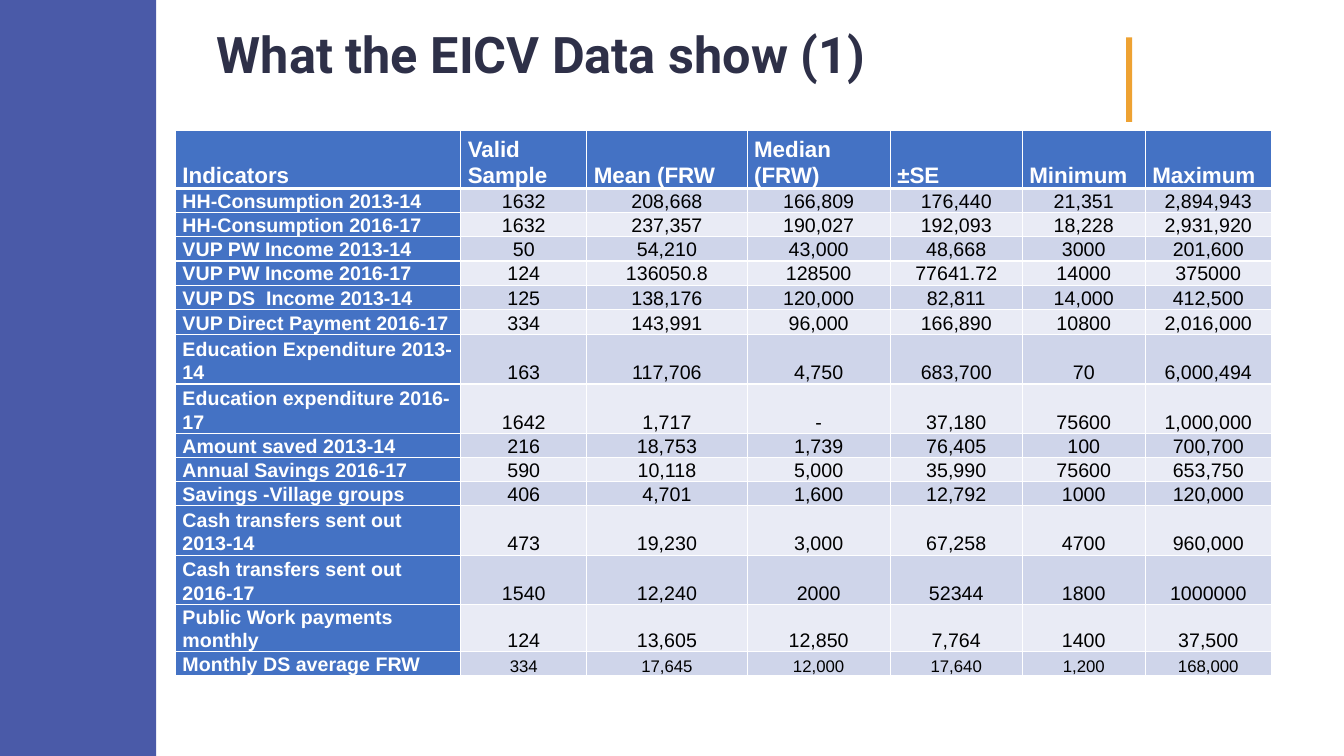
from dataclasses import dataclass

from lxml.etree import SubElement
from pptx import Presentation
from pptx.dml.color import RGBColor
from pptx.enum.shapes import MSO_SHAPE
from pptx.enum.text import MSO_ANCHOR, PP_ALIGN
from pptx.oxml.ns import qn
from pptx.util import Inches, Pt

TITLE = "What the EICV Data show (1)"
HEADS = ["Indicators", "Valid Sample", "Mean (FRW", "Median (FRW)", "±SE", "Minimum", "Maximum"]
ROWS = [
    ("HH-Consumption 2013-14", "1632", "208,668", "166,809", "176,440", "21,351", "2,894,943"),
    ("HH-Consumption 2016-17", "1632", "237,357", "190,027", "192,093", "18,228", "2,931,920"),
    ("VUP PW Income 2013-14", "50", "54,210", "43,000", "48,668", "3000", "201,600"),
    ("VUP PW Income 2016-17", "124", "136050.8", "128500", "77641.72", "14000", "375000"),
    ("VUP DS  Income 2013-14", "125", "138,176", "120,000", "82,811", "14,000", "412,500"),
    ("VUP Direct Payment 2016-17", "334", "143,991", "96,000", "166,890", "10800", "2,016,000"),
    ("Education Expenditure 2013-14", "163", "117,706", "4,750", "683,700", "70", "6,000,494"),
    ("Education expenditure 2016-17", "1642", "1,717", "-", "37,180", "75600", "1,000,000"),
    ("Amount saved 2013-14", "216", "18,753", "1,739", "76,405", "100", "700,700"),
    ("Annual Savings 2016-17", "590", "10,118", "5,000", "35,990", "75600", "653,750"),
    ("Savings -Village groups", "406", "4,701", "1,600", "12,792", "1000", "120,000"),
    ("Cash transfers sent out 2013-14", "473", "19,230", "3,000", "67,258", "4700", "960,000"),
    ("Cash transfers sent out 2016-17", "1540", "12,240", "2000", "52344", "1800", "1000000"),
    ("Public Work payments monthly", "124", "13,605", "12,850", "7,764", "1400", "37,500"),
    ("Monthly DS average FRW", "334", "17,645", "12,000", "17,640", "1,200", "168,000"),
]
WIDTHS = [2.83, 1.25, 1.59, 1.42, 1.31, 1.22, 1.25]
HEIGHTS = [0.58] + [0.24] * 5 + [0.25] + [0.49] * 2 + [0.24] * 3 + [0.49] * 2 + [0.47, 0.24]


@dataclass(frozen=True)
class Theme:
    side: str = "4A5AA8"
    accent: str = "EEA232"
    title: str = "2E3048"
    head: str = "4472C4"
    bands: tuple = ("CFD5EA", "E9EBF5")
    white: str = "FFFFFF"
    black: str = "000000"
    title_font: str = "Roboto"
    font: str = "Arial"
    title_size: int = 36
    head_size: int = 16
    size: int = 14
    small: int = 12


THEME = Theme()


def write(frame, text, font=THEME.font, size=THEME.size, color=THEME.black,
          bold=False, align=PP_ALIGN.LEFT, spacing=1.07):
    para = frame.paragraphs[0]
    para.alignment, para.line_spacing = align, spacing
    run = para.add_run()
    run.text = text
    run.font.name, run.font.size, run.font.bold = font, Pt(size), bold
    run.font.color.rgb = RGBColor.from_string(color)


def add_bar(slide, box, color):
    bar = slide.shapes.add_shape(MSO_SHAPE.RECTANGLE, *map(Inches, box))
    bar.shadow.inherit = False
    bar.fill.solid()
    bar.fill.fore_color.rgb = RGBColor.from_string(color)
    bar.line.fill.background()


def add_borders(cell, bottom):
    """Draw white cell borders; bottom is the lower line's width in points."""
    props = cell._tc.get_or_add_tcPr()
    for side, width in (("L", 1), ("R", 1), ("T", 1), ("B", bottom)):
        line = SubElement(props, qn(f"a:ln{side}"), w=str(Pt(width)))
        fill = SubElement(line, qn("a:solidFill"))
        SubElement(fill, qn("a:srgbClr"), val=THEME.white)


def style_cell(cell, fill, bottom=1):
    add_borders(cell, bottom)
    cell.fill.solid()
    cell.fill.fore_color.rgb = RGBColor.from_string(fill)
    cell.vertical_anchor = MSO_ANCHOR.BOTTOM
    cell.margin_left = cell.margin_right = Inches(0.07)
    cell.margin_top = cell.margin_bottom = 0


def add_title(slide):
    title = slide.shapes.title
    title.left, title.top, title.width, title.height = map(Inches, (2.05, 0.14, 8.95, 0.86))
    title.text_frame.vertical_anchor = MSO_ANCHOR.MIDDLE
    write(title.text_frame, TITLE, font=THEME.title_font, size=THEME.title_size,
          color=THEME.title, bold=True, spacing=0.9)


def add_data(slide):
    box = (1.74, 1.29, sum(WIDTHS), sum(HEIGHTS))
    table = slide.shapes.add_table(len(HEIGHTS), len(WIDTHS), *map(Inches, box)).table
    table.first_col = True
    for col, width in zip(table.columns, WIDTHS):
        col.width = Inches(width)
    for row, height in zip(table.rows, HEIGHTS):
        row.height = Inches(height)
    for c, text in enumerate(HEADS):
        cell = table.cell(0, c)
        style_cell(cell, THEME.head, bottom=3)
        write(cell.text_frame, text, size=THEME.head_size, color=THEME.white, bold=True)
    for r, (label, *values) in enumerate(ROWS, 1):
        cell = table.cell(r, 0)
        style_cell(cell, THEME.head)
        write(cell.text_frame, label, color=THEME.white, bold=True)
        size = THEME.small if r == len(ROWS) else THEME.size
        for c, text in enumerate(values, 1):
            cell = table.cell(r, c)
            style_cell(cell, THEME.bands[(r - 1) % 2])
            write(cell.text_frame, text, size=size, align=PP_ALIGN.CENTER)


def main():
    deck = Presentation()
    deck.slide_width, deck.slide_height = Inches(13.33), Inches(7.5)
    slide = deck.slides.add_slide(deck.slide_layouts[5])
    add_bar(slide, (0, 0, 1.55, 7.5), THEME.side)
    add_bar(slide, (11.17, 0.37, 0.06, 0.84), THEME.accent)
    add_title(slide)
    add_data(slide)
    deck.save("out.pptx")


if __name__ == "__main__":
    main()
